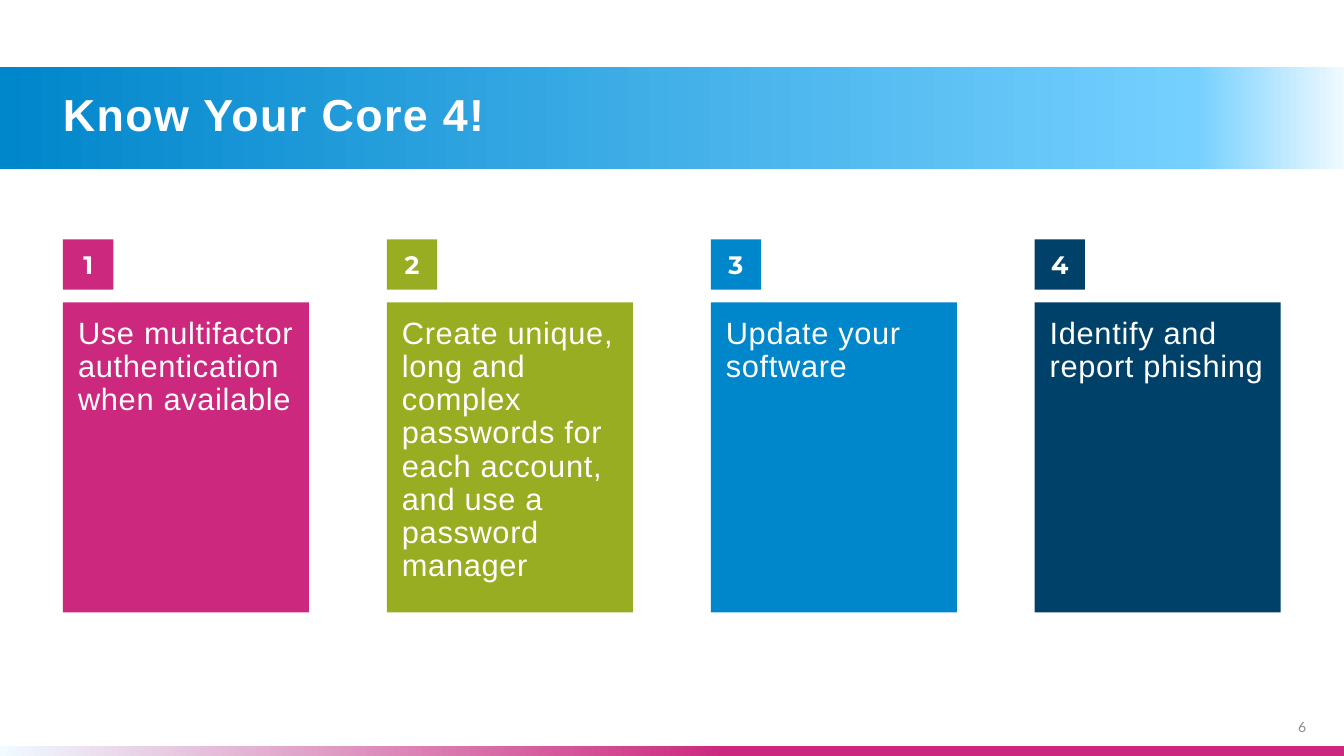
from lxml import etree
from pptx import Presentation
from pptx.dml.color import RGBColor
from pptx.enum.shapes import MSO_SHAPE as Shape
from pptx.enum.text import MSO_ANCHOR as Anchor, PP_ALIGN as Align
from pptx.oxml import parse_xml
from pptx.oxml.ns import nsdecls, qn
from pptx.util import Pt

# Content
TITLE = "Know Your Core 4!"
PAGE = "6"
CARDS = [
    ("Use multifactor authentication when available", "CC297E"),
    ("Create unique, long and complex passwords for each account, "
     "and use a password manager", "98AD22"),
    ("Update your software", "0086CB"),
    ("Identify and report phishing", "004169"),
]
BANDS = [  # top, height, angle, stops
    (47.5, 73, 180, [(0, "F0FAFF"), (11, "75D0FF"), (100, "0086CB")]),
    (533, 9, 0, [(0, "F0FAFF"), (54, "CC297E")]),
]
WHITE, GREY = "FFFFFF", "8C8C8C"

# Layout in points
WIDE, HIGH = 960, 540
LEFT, STEP = 45, 231.35
TAG_TOP, TAG = 171, 36
CARD_TOP, CARD_W, CARD_H, PAD = 216, 175.75, 221.5, 10.8


def color(code):
    return RGBColor.from_string(code)


def rect(slide, x, y, w, h, fill=None):
    box = slide.shapes.add_shape(Shape.RECTANGLE, Pt(x), Pt(y), Pt(w), Pt(h))
    box.shadow.inherit = False
    box.line.fill.background()
    if fill:
        box.fill.solid()
        box.fill.fore_color.rgb = color(fill)
    return box


def band(slide, y, h, angle, stops):
    box = rect(slide, 0, y, WIDE, h)
    box.fill.gradient()
    box.fill.gradient_angle = angle
    stop_list = next(box.element.spPr.iter(qn("a:gsLst")))
    for old in list(stop_list):
        stop_list.remove(old)
    for pos, code in stops:
        stop = etree.SubElement(stop_list, qn("a:gs"), pos=str(pos * 1000))
        etree.SubElement(stop, qn("a:srgbClr"), val=code)


def write(box, text, size, face, code=WHITE, bold=False, align=Align.LEFT,
          anchor=Anchor.MIDDLE, pad=0, line=None, gap=0):
    frame = box.text_frame
    frame.word_wrap = True
    frame.vertical_anchor = anchor
    frame.margin_left = frame.margin_right = Pt(pad)
    frame.margin_top = frame.margin_bottom = Pt(pad)
    para = frame.paragraphs[0]
    para.alignment = align
    if line:
        para.line_spacing = line
    run = para.add_run()
    run.text = text
    font = run.font
    font.size, font.name, font.bold = Pt(size), face, bold
    font.color.rgb = color(code)
    if gap:
        run._r.get_or_add_rPr().set("spc", str(int(gap * 100)))
    return run


def shade(run):
    effect = parse_xml(
        f'<a:effectLst {nsdecls("a")}>'
        '<a:outerShdw blurRad="50800" dist="38100" dir="2700000">'
        '<a:srgbClr val="000000"><a:alpha val="40000"/></a:srgbClr>'
        '</a:outerShdw></a:effectLst>')
    run._r.rPr.find(qn("a:solidFill")).addnext(effect)


def label(slide, x, y, w, h):
    return slide.shapes.add_textbox(Pt(x), Pt(y), Pt(w), Pt(h))


def main():
    deck = Presentation()
    deck.slide_width, deck.slide_height = Pt(WIDE), Pt(HIGH)
    slide = deck.slides.add_slide(deck.slide_layouts[6])

    # Bands, page number and title
    for spec_row in BANDS:
        band(slide, *spec_row)
    write(label(slide, 894, 496, 39, 29), PAGE, 10, "Lato", GREY,
          align=Align.RIGHT, anchor=Anchor.BOTTOM)
    shade(write(label(slide, LEFT, 62.5, 828, 42.5), TITLE, 32, "Arial",
                bold=True, line=0.9, gap=1))

    # Numbered cards
    for i, (text, fill) in enumerate(CARDS):
        x = LEFT + i * STEP
        tag = rect(slide, x, TAG_TOP, TAG, TAG, fill)
        write(tag, str(i + 1), 18, "Montserrat", bold=True, align=Align.CENTER)
        card = rect(slide, x, CARD_TOP, CARD_W, CARD_H, fill)
        write(card, text, 22, "Arial", anchor=Anchor.TOP, pad=PAD,
              line=0.9, gap=0.5)

    deck.save("out.pptx")


if __name__ == "__main__":
    main()
